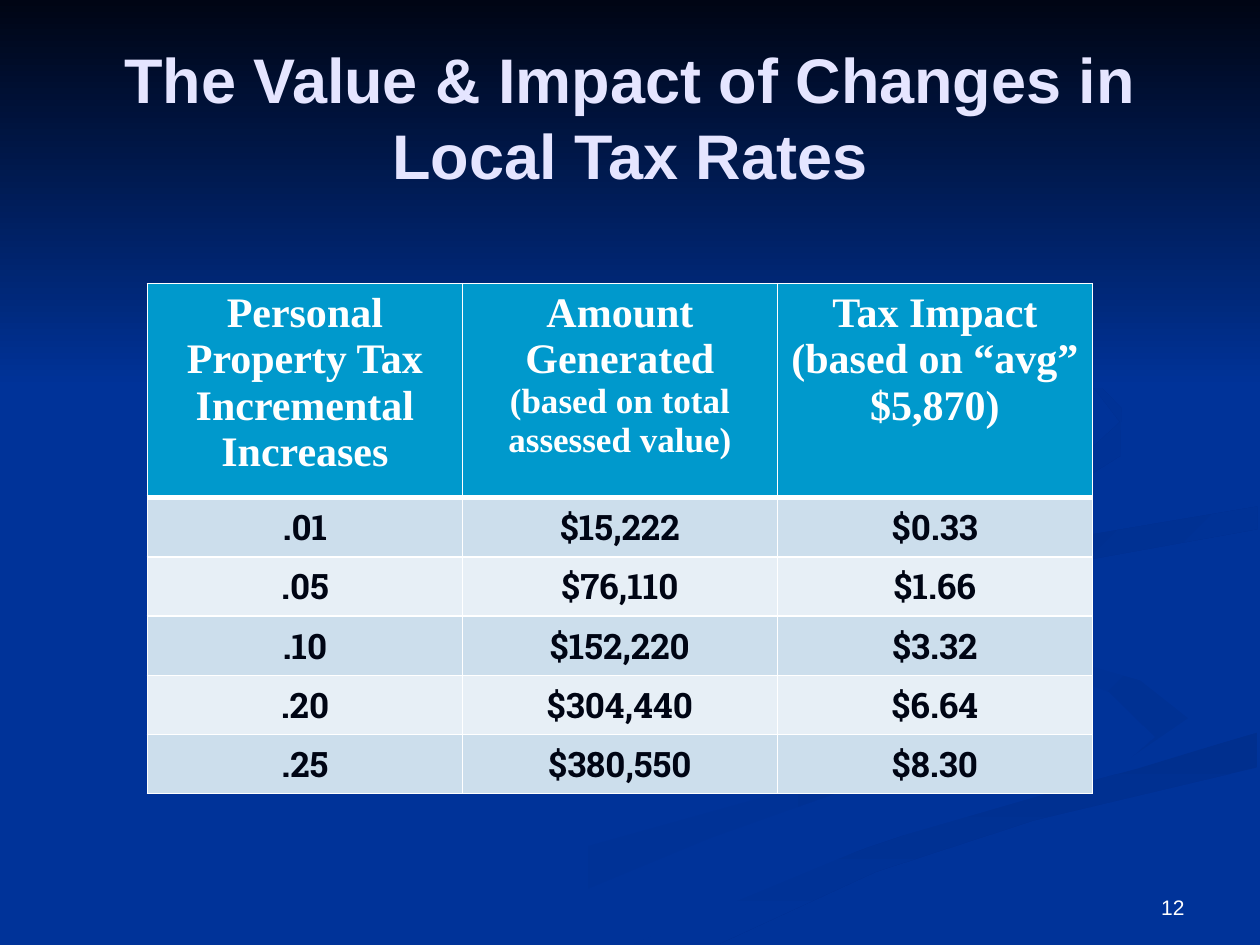
from lxml import etree
from pptx import Presentation, util as u
from pptx.dml.color import RGBColor
from pptx.enum import text
from pptx.oxml import ns

BLUE = RGBColor(0x00, 0x33, 0x99)
NIGHT = RGBColor(0x00, 0x05, 0x14)
SHADE = RGBColor(0x00, 0x2F, 0x8E)
FAINT_SHADE = RGBColor(0x00, 0x31, 0x93)
LAVENDER = RGBColor(0xE5, 0xE5, 0xFF)
WHITE = RGBColor(0xFF, 0xFF, 0xFF)
HEADER = RGBColor(0x00, 0x99, 0xCC)
BANDS = [RGBColor(0xCC, 0xDE, 0xEC), RGBColor(0xE7, 0xEF, 0xF6)]

presentation = Presentation()
presentation.slide_width, presentation.slide_height = u.Inches(10), u.Inches(7.5)
WIDTH, HEIGHT = presentation.slide_width, presentation.slide_height
slide = presentation.slides.add_slide(presentation.slide_layouts[5])
slide.background.fill.solid()
slide.background.fill.fore_color.rgb = BLUE


def style_run(run, font_name, size, color, bold=True):
    run.font.name, run.font.size, run.font.bold = font_name, u.Pt(size), bold
    run.font.color.rgb = color


def add_borders(cell, bottom_width):
    properties = cell._tc.get_or_add_tcPr()
    for side, points in (("L", 1), ("R", 1), ("T", 1), ("B", bottom_width)):
        line = etree.SubElement(properties, ns.qn(f"a:ln{side}"), w=str(u.Pt(points)))
        fill = etree.SubElement(line, ns.qn("a:solidFill"))
        etree.SubElement(fill, ns.qn("a:srgbClr"), val=str(WHITE))


# Background ribbons: start colour, end colour, clockwise angle, outline
# in thousandths of the slide's width
ribbons = [
    (BLUE, FAINT_SHADE, 0, [
        (781, 553), (682, 519), (575, 459), (611, 499), (781, 556),
        (759, 590), (458, 674), (300, 749), (361, 749), (564, 665), (800, 581)]),
    (BLUE, FAINT_SHADE, 45, [
        (943, 570), (905, 540), (758, 498), (724, 464), (755, 505),
        (880, 549), (917, 585), (894, 605), (941, 581)]),
    (SHADE, BLUE, 90, [
        (503, 749), (571, 749), (695, 692), (821, 651), (998, 609),
        (998, 581), (903, 610), (764, 647), (630, 693)]),
    (BLUE, BLUE, 0, [
        (725, 464), (759, 498), (905, 540), (943, 570), (892, 605),
        (663, 668), (477, 749), (503, 749), (696, 669), (999, 581),
        (999, 538), (832, 498), (781, 463), (850, 427), (999, 402),
        (999, 387), (788, 422)]),
    (SHADE, BLUE, 45, [
        (781, 460), (791, 478), (826, 496), (805, 472), (843, 448),
        (998, 420), (998, 402), (849, 427), (799, 442)]),
    (SHADE, BLUE, 45, [
        (683, 430), (825, 402), (889, 362), (890, 324), (843, 275),
        (762, 233), (846, 279), (889, 335), (842, 378), (649, 420),
        (580, 451), (580, 474), (622, 500), (593, 470), (624, 444)]),
    # Night sky over the top of the slide
    (NIGHT, BLUE, 90, [(0, 0), (0, 308), (1000, 308), (1000, 0)]),
]
for start_color, end_color, angle, outline in ribbons:
    builder = slide.shapes.build_freeform(*outline[0], scale=WIDTH / 1000)
    builder.add_line_segments(outline[1:], close=True)
    shape = builder.convert_to_shape()
    shape.shadow.inherit = False
    shape.line.fill.background()
    shape.fill.gradient()
    shape.fill.gradient_angle = (360 - angle) % 360
    for stop, color, position in zip(shape.fill.gradient_stops, (start_color, end_color), (0, 1)):
        stop.color.rgb, stop.position = color, position

# Title, brought in front of the background
title = slide.shapes.title
slide.shapes._spTree.append(title._element)
title.left, title.top = int(WIDTH * 0.05), int(HEIGHT * 0.04)
title.width, title.height = int(WIDTH * 0.9), u.Inches(1.25)
title.text_frame.text = "The Value & Impact of Changes in Local Tax Rates"
title.text_frame.vertical_anchor = text.MSO_ANCHOR.MIDDLE
title.text_frame.paragraphs[0].alignment = text.PP_ALIGN.CENTER
style_run(title.text_frame.paragraphs[0].runs[0], "Arial", 36, LAVENDER)

# Slide number
number = slide.shapes.add_textbox(u.Inches(7.17), int(HEIGHT * 0.91), u.Inches(2.33), u.Inches(0.52))
number.text_frame.word_wrap = True
number.text_frame.text = "12"
number.text_frame.vertical_anchor = text.MSO_ANCHOR.BOTTOM
number.text_frame.paragraphs[0].alignment = text.PP_ALIGN.RIGHT
style_run(number.text_frame.paragraphs[0].runs[0], "Arial", 12, WHITE, bold=False)

# Tax rate table
rows = [
    ("Personal Property Tax Incremental Increases", "Amount Generated ",
     "Tax Impact (based on “avg” $5,870)"),
    (".01", "$15,222", "$0.33"),
    (".05", "$76,110", "$1.66"),
    (".10", "$152,220", "$3.32"),
    (".20", "$304,440", "$6.64"),
    (".25", "$380,550", "$8.30"),
]
table = slide.shapes.add_table(len(rows), 3, u.Inches(1.17), int(HEIGHT * 0.3),
                               int(WIDTH * 0.75), u.Inches(3.92)).table
for row_index, values in enumerate(rows):
    is_header = row_index == 0
    table.rows[row_index].height = u.Inches(1.57 if is_header else 0.47)
    for column_index, value in enumerate(values):
        cell = table.cell(row_index, column_index)
        add_borders(cell, 3 if is_header else 1)
        cell.fill.solid()
        cell.fill.fore_color.rgb = HEADER if is_header else BANDS[(row_index - 1) % 2]
        cell.text_frame.text = value
        paragraph = cell.text_frame.paragraphs[0]
        paragraph.alignment = text.PP_ALIGN.CENTER
        if is_header:
            style_run(paragraph.runs[0], "Times New Roman", 24, WHITE)
        else:
            style_run(paragraph.runs[0], "Roboto Slab", 20, NIGHT)

# Smaller note after the middle heading
note = table.cell(0, 1).text_frame.paragraphs[0].add_run()
note.text = "(based on total assessed value)"
style_run(note, "Times New Roman", 20, WHITE)

presentation.save("out.pptx")
